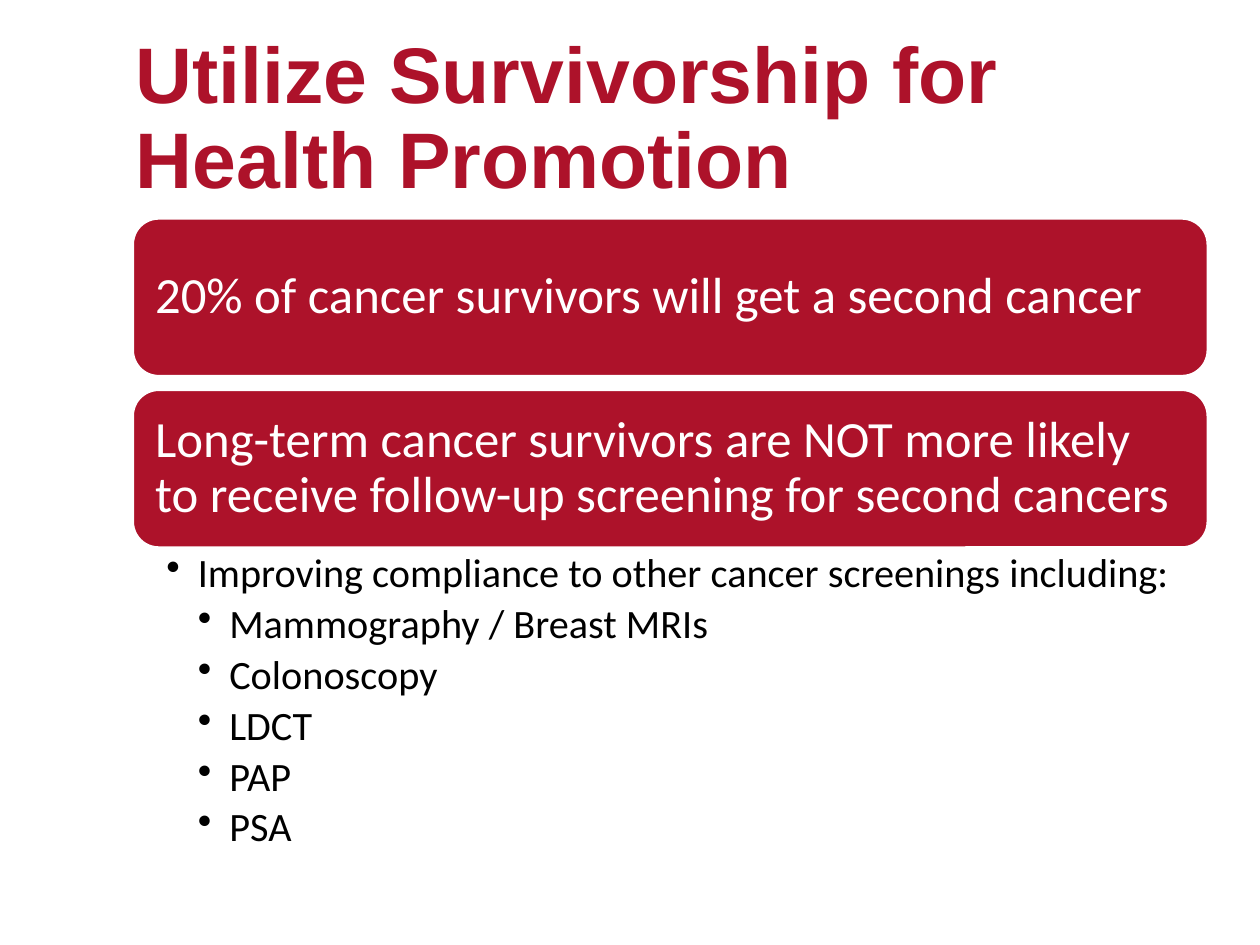
import pptx
import pptx.dml.color
import pptx.enum.shapes
import pptx.enum.text
import pptx.oxml.ns
import pptx.util
from dataclasses import dataclass
from lxml import etree

Inches = pptx.util.Inches
Pt = pptx.util.Pt
Color = pptx.dml.color.RGBColor
Anchor = pptx.enum.text.MSO_ANCHOR


@dataclass(frozen=True)
class Theme:
    crimson: Color = Color(0xAD, 0x12, 0x2A)
    white: Color = Color(0xFF, 0xFF, 0xFF)
    black: Color = Color(0, 0, 0)
    heading_font: str = "Arial"
    body_font: str = "Calibri"
    title_size: int = 45
    card_size: int = 29
    list_size: int = 23


theme = Theme()


def set_frame(frame, anchor, left, top, right, bottom):
    frame.word_wrap = True
    frame.vertical_anchor = anchor
    frame.margin_left, frame.margin_top = Inches(left), Inches(top)
    frame.margin_right, frame.margin_bottom = Inches(right), Inches(bottom)


def add_span(para, text, font, size, color, bold=False):
    para.alignment = pptx.enum.text.PP_ALIGN.LEFT
    para.line_spacing = 0.9
    span = para.add_run()
    span.text = text
    span.font.name = font
    span.font.size = Pt(size)
    span.font.bold = bold
    span.font.color.rgb = color


deck = pptx.Presentation()
deck.slide_width, deck.slide_height = Inches(10), Inches(7.5)
page = deck.slides.add_slide(deck.slide_layouts[6])

title = page.shapes.add_textbox(Inches(0.98), Inches(0.14), Inches(8.32), Inches(1.49))
set_frame(title.text_frame, Anchor.BOTTOM, 0.1, 0, 0.1, 0)
add_span(title.text_frame.paragraphs[0], "Utilize Survivorship for Health Promotion",
         theme.heading_font, theme.title_size, theme.crimson, bold=True)

facts = [
    "20% of cancer survivors will get a second cancer",
    "Long-term cancer survivors are NOT more likely to receive follow-up screening for second cancers",
]
for index, fact in enumerate(facts):
    card = page.shapes.add_shape(
        pptx.enum.shapes.MSO_SHAPE.ROUNDED_RECTANGLE,
        Inches(1.05), Inches(1.73 + index * 1.36), Inches(8.54), Inches(1.26))
    card.shadow.inherit = False
    card.fill.solid()
    card.fill.fore_color.rgb = theme.crimson
    card.line.color.rgb = theme.white
    card.line.width = Pt(2)
    set_frame(card.text_frame, Anchor.MIDDLE, 0.12, 0.12, 0.12, 0.12)
    add_span(card.text_frame.paragraphs[0], fact,
             theme.body_font, theme.card_size, theme.white)

screenings = [
    (1, "Improving compliance to other cancer screenings including:"),
    (2, "Mammography / Breast MRIs"),
    (2, "Colonoscopy"),
    (2, "LDCT"),
    (2, "PAP"),
    (2, "PSA"),
]
box = page.shapes.add_textbox(Inches(1.05), Inches(4.35), Inches(8.54), Inches(2.63))
set_frame(box.text_frame, Anchor.TOP, 0.27, 0.04, 0.23, 0.04)
for index, (level, screening) in enumerate(screenings):
    para = box.text_frame.add_paragraph() if index else box.text_frame.paragraphs[0]
    para.level = level
    properties = para._p.get_or_add_pPr()
    properties.set("marL", str(Inches(0.25 * level)))
    properties.set("indent", str(Inches(-0.25)))
    bullet = etree.SubElement(properties, pptx.oxml.ns.qn("a:buChar"))
    bullet.set("char", "•")
    para.space_after = Pt(4.2)
    add_span(para, screening, theme.body_font, theme.list_size, theme.black)

deck.save("out.pptx")
